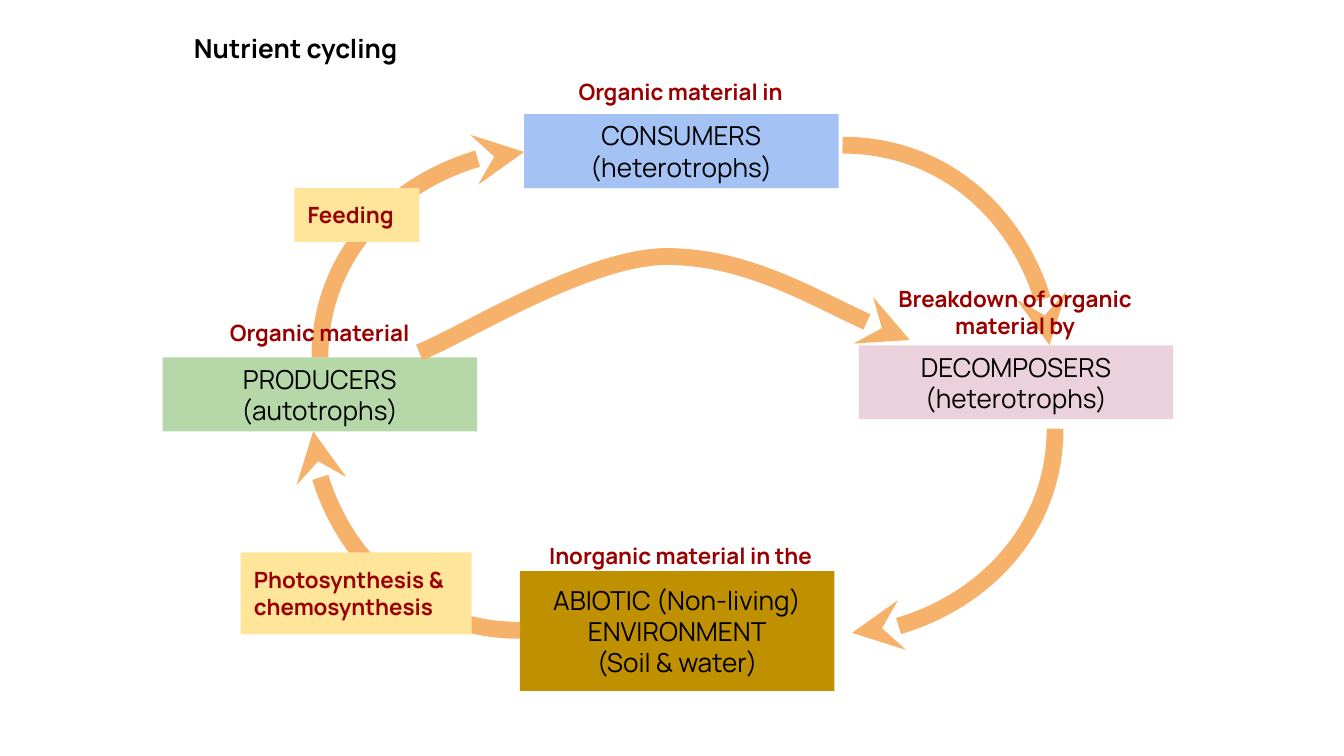
from pptx import Presentation
from pptx.dml.color import RGBColor
from pptx.enum.shapes import MSO_CONNECTOR, MSO_SHAPE
from pptx.enum.text import MSO_ANCHOR, MSO_AUTO_SIZE, PP_ALIGN
from pptx.oxml.ns import qn
from pptx.util import Pt
from lxml import etree

RECTANGLE = MSO_SHAPE.RECTANGLE
CURVE = MSO_CONNECTOR.CURVE
LEFT, CENTER = PP_ALIGN.LEFT, PP_ALIGN.CENTER
TOP, MIDDLE = MSO_ANCHOR.TOP, MSO_ANCHOR.MIDDLE
FIT = MSO_AUTO_SIZE.SHAPE_TO_FIT_TEXT

BLACK = RGBColor(0x00, 0x00, 0x00)
DARK_RED = RGBColor(0x99, 0x00, 0x00)
ORANGE = RGBColor(0xF6, 0xB2, 0x6B)
YELLOW = RGBColor(0xFF, 0xE5, 0x99)
OCHRE = RGBColor(0xBF, 0x90, 0x00)
GREEN = RGBColor(0xB6, 0xD7, 0xA8)
BLUE = RGBColor(0xA4, 0xC2, 0xF4)
PINK = RGBColor(0xEA, 0xD1, 0xDC)

HEAD, TAIL = "a:headEnd", "a:tailEnd"
NODE_WIDTH, NODE_HEIGHT = 168.5, 39.6


class CycleDiagram:
    """Draws the parts of a nutrient cycle on one slide in a shared style."""

    font_name = "Manrope"
    inset = Pt(7.2)
    flow_width = Pt(9)

    def __init__(self, slide):
        self.slide = slide

    def set_text(self, shape, text, size, color, bold, align, anchor=TOP):
        frame = shape.text_frame
        frame.word_wrap = True
        frame.vertical_anchor = anchor
        frame.margin_left = frame.margin_right = self.inset
        frame.margin_top = frame.margin_bottom = self.inset
        frame.text = text
        for paragraph in frame.paragraphs:
            paragraph.alignment = align
            font = paragraph.font
            font.name, font.size, font.bold = self.font_name, Pt(size), bold
            font.color.rgb = color
        return frame

    def box(self, left, top, width, height, fill):
        box = self.slide.shapes.add_shape(
            RECTANGLE, Pt(left), Pt(top), Pt(width), Pt(height))
        box.shadow.inherit = False
        box.fill.solid()
        box.fill.fore_color.rgb = fill
        box.line.fill.background()
        return box

    def node(self, text, left, top, fill, height=NODE_HEIGHT):
        box = self.box(left, top, NODE_WIDTH, height, fill)
        self.set_text(box, text, 14, BLACK, False, CENTER, MIDDLE)

    def process(self, text, left, top, width, height):
        box = self.box(left, top, width, height, YELLOW)
        self.set_text(box, text, 12, DARK_RED, True, LEFT).auto_size = FIT

    def label(self, text, left, top, width, height, size=12,
              color=DARK_RED, spacing=None):
        label = self.slide.shapes.add_textbox(
            Pt(left), Pt(top), Pt(width), Pt(height))
        frame = self.set_text(label, text, size, color, True, CENTER)
        frame.auto_size = FIT
        frame.paragraphs[0].line_spacing = spacing

    def style_flow(self, flow, arrow_end):
        flow.line.color.rgb = ORANGE
        flow.line.width = self.flow_width
        stroke = flow._element.spPr.find(qn("a:ln"))
        etree.SubElement(stroke, qn(arrow_end)).set("type", "stealth")

    def quarter_flow(self, start, end, arrow_end):
        flow = self.slide.shapes.add_connector(
            CURVE, *(Pt(value) for value in start + end))
        self.style_flow(flow, arrow_end)
        properties = flow._element.spPr
        properties.find(qn("a:prstGeom")).set("prst", "curvedConnector2")
        etree.SubElement(properties, qn("a:effectLst"))

    def bezier_flow(self, start, points):
        builder = self.slide.shapes.build_freeform(*map(Pt, start))
        builder.add_line_segments(
            [(Pt(x), Pt(y)) for x, y in points], close=False)
        flow = builder.convert_to_shape()
        flow.shadow.inherit = False
        flow.fill.background()
        self.style_flow(flow, TAIL)
        segments = flow._element.xpath(".//a:lnTo")
        route = segments[0].getparent()
        for first in range(0, len(segments), 3):
            curve = etree.SubElement(route, qn("a:cubicBezTo"))
            for segment in segments[first:first + 3]:
                curve.append(segment[0])
                route.remove(segment)


def main():
    presentation = Presentation()
    presentation.slide_width, presentation.slide_height = Pt(720), Pt(405)
    slide = presentation.slides.add_slide(presentation.slide_layouts[6])
    cycle = CycleDiagram(slide)

    cycle.label("Nutrient cycling", 64.8, 10.1, 187.2, 31.7, 14, BLACK)

    cycle.node("ABIOTIC (Non-living)\nENVIRONMENT\n(Soil & water)",
               278.6, 306, OCHRE, 64.1)
    cycle.node("PRODUCERS\n(autotrophs)", 87.1, 191.5, GREEN)
    cycle.node("CONSUMERS\n(heterotrophs)", 280.8, 61.2, BLUE)
    cycle.node("DECOMPOSERS\n(heterotrophs)", 460.1, 185, PINK)

    for start, end, arrow_end in (
        ((280.8, 81.4), (171.4, 191.5), HEAD),
        ((451.4, 77.8), (562.3, 185), TAIL),
        ((278.6, 337.7), (167.8, 231.1), TAIL),
        ((456.5, 339.1), (565.2, 229.7), HEAD),
    ):
        cycle.quarter_flow(start, end, arrow_end)

    cycle.process("Photosynthesis & chemosynthesis", 128.9, 295.9, 123.8, 43.9)
    cycle.process("Feeding", 157.7, 100.8, 67, 28.8)

    cycle.label("Organic material", 109.4, 167.8, 123.8, 25.9, spacing=0.8)
    cycle.label("Organic material in", 275.8, 34.6, 177.8, 28.8)
    cycle.label("Breakdown of organic material by", 455, 145.4, 177.8, 43.9)
    cycle.label("Inorganic material in the", 275.8, 283, 177.8, 28.8)

    cycle.bezier_flow((224.6, 188.8), [
        (246.2, 180.7), (311.8, 139), (355, 137.5),
        (398.9, 136.8), (465.1, 175), (487.4, 182.2)])

    presentation.save("out.pptx")


if __name__ == "__main__":
    main()
